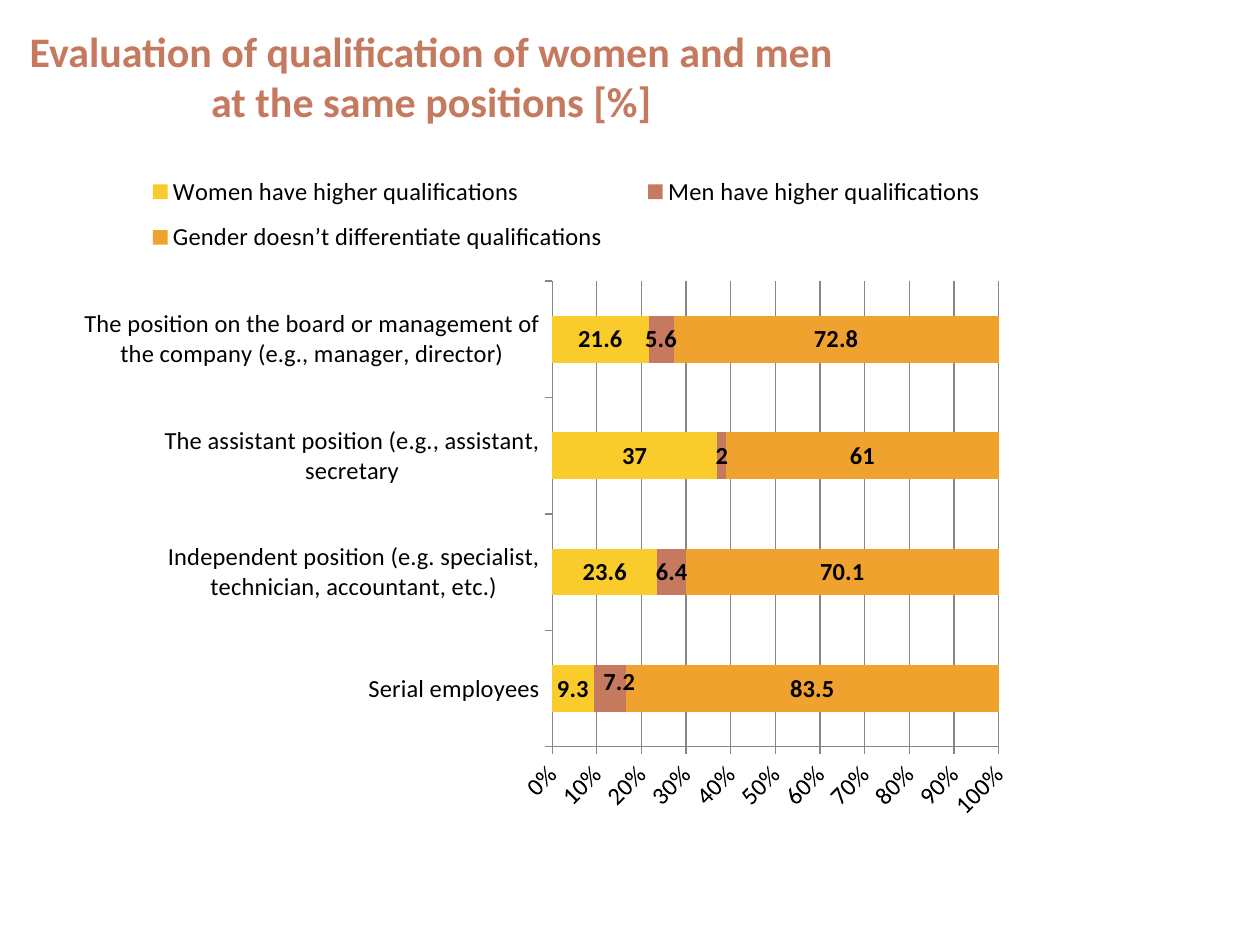
import pptx
import pptx.chart.data
import pptx.dml.color
import pptx.enum.chart
import pptx.enum.text
import pptx.oxml
import pptx.oxml.ns
import pptx.util

Cm, Pt = pptx.util.Cm, pptx.util.Pt
RGBColor = pptx.dml.color.RGBColor
qn = pptx.oxml.ns.qn

BLACK = RGBColor(0x00, 0x00, 0x00)
YELLOW = RGBColor(0xF9, 0xCC, 0x2B)
TERRACOTTA = RGBColor(0xC5, 0x7A, 0x5F)
ORANGE = RGBColor(0xF0, 0xA2, 0x2E)
GRAY = RGBColor(0x86, 0x86, 0x86)

# Data, from the bottom bar to the top bar
POSITIONS = [
    "Serial employees",
    "Independent position (e.g. specialist, technician, accountant, etc.)",
    "The assistant position (e.g., assistant, secretary",
    "The position on the board or management of the company "
    "(e.g., manager, director)",
]
ANSWERS = [
    ("Women have higher qualifications", YELLOW, (9.3, 23.6, 37, 21.6)),
    ("Men have higher qualifications", TERRACOTTA, (7.2, 6.4, 2, 5.6)),
    ("Gender doesn’t differentiate qualifications", ORANGE, (83.5, 70.1, 61, 72.8)),
]


def apply(target, values):
    for name, value in values.items():
        setattr(target, name, value)


def make_layout(**settings):
    """Manual chart layout, as fractions of the chart area."""
    items = "".join(f'<c:{name} val="{value}"/>' for name, value in settings.items())
    return pptx.oxml.parse_xml(
        f'<c:layout {pptx.oxml.ns.nsdecls("c")}>'
        f"<c:manualLayout>{items}</c:manualLayout></c:layout>"
    )


class SlideBuilder:
    title_format = {"name": "Calibri", "size": Pt(24), "bold": True}
    chart_format = {"name": "Calibri", "size": Pt(14), "bold": False}
    label_format = {"name": "Calibri", "size": Pt(14), "bold": True}

    def __init__(self, page):
        self.page = page

    def style(self, font, values, color=BLACK):
        apply(font, values)
        font.color.rgb = color

    def title(self, text, left, top, width, height):
        box = self.page.shapes.add_textbox(Cm(left), Cm(top), Cm(width), Cm(height))
        frame = box.text_frame
        apply(frame, {"word_wrap": True,
                      "vertical_anchor": pptx.enum.text.MSO_ANCHOR.MIDDLE})
        para = frame.paragraphs[0]
        para.alignment = pptx.enum.text.PP_ALIGN.CENTER
        span = para.add_run()
        span.text = text
        self.style(span.font, self.title_format, TERRACOTTA)

    def axis(self, axis):
        axis.major_tick_mark = pptx.enum.chart.XL_TICK_MARK.OUTSIDE
        axis.format.line.color.rgb = GRAY
        self.style(axis.tick_labels.font, self.chart_format)

    def series(self, series, color):
        series.format.fill.solid()
        series.format.fill.fore_color.rgb = color
        labels = series.data_labels
        labels.show_value = True
        self.style(labels.font, self.label_format)

    def move_label(self, point, x, y):
        label = point.data_label
        self.style(label.font, self.label_format)
        entry = label._get_or_add_dLbl()
        entry.insert(1, make_layout(x=x, y=y))

    def stacked_chart(self, left, top, width, height):
        data = pptx.chart.data.CategoryChartData()
        data.categories = POSITIONS
        for name, _, values in ANSWERS:
            data.add_series(name, values)
        chart = self.page.shapes.add_chart(
            pptx.enum.chart.XL_CHART_TYPE.BAR_STACKED_100,
            Cm(left), Cm(top), Cm(width), Cm(height), data).chart
        chart.has_title = False
        self.style(chart.font, self.chart_format)

        # Bars and their values
        plot = chart.plots[0]
        apply(plot, {"gap_width": 150, "overlap": 100, "vary_by_categories": False})
        for series, (_, color, _) in zip(plot.series, ANSWERS):
            self.series(series, color)
        self.move_label(plot.series[1].points[0], 0.01, -0.01)

        # Axes, with slanted percentages
        self.axis(chart.category_axis)
        scale = chart.value_axis
        self.axis(scale)
        apply(scale, {"minimum_scale": 0, "maximum_scale": 1, "major_unit": 0.1,
                      "has_major_gridlines": True})
        scale.major_gridlines.format.line.color.rgb = GRAY
        apply(scale.tick_labels, {"number_format": "0%",
                                  "number_format_is_linked": False})
        scale._element.find(qn("c:txPr")).find(qn("a:bodyPr")).set("rot", "-2700000")

        # Legend and plot placement
        chart.has_legend = True
        legend = chart.legend
        apply(legend, {"position": pptx.enum.chart.XL_LEGEND_POSITION.TOP,
                       "include_in_layout": False})
        self.style(legend.font, self.chart_format)
        old = legend._element.find(qn("c:layout"))
        if old is not None:
            legend._element.remove(old)
        legend._element.insert(1, make_layout(
            xMode="edge", yMode="edge", x=0.03, y=0.01, w=0.95, h=0.16))
        area = chart._chartSpace.chart.plotArea
        old = area.find(qn("c:layout"))
        if old is not None:
            area.remove(old)
        area.insert(0, make_layout(layoutTarget="inner", xMode="edge", yMode="edge",
                                   x=0.49, y=0.19, w=0.47, h=0.7))


def main():
    deck = pptx.Presentation()
    apply(deck, {"slide_width": Cm(25.4), "slide_height": Cm(19.05)})
    builder = SlideBuilder(deck.slides.add_slide(deck.slide_layouts[6]))
    builder.title("Evaluation of qualification of women and men "
                  "at the same positions [%]", 0.3, 0.33, 16.79, 2.39)
    builder.stacked_chart(1.7, 3.12, 19.2, 13.41)
    deck.save("out.pptx")


if __name__ == "__main__":
    main()
